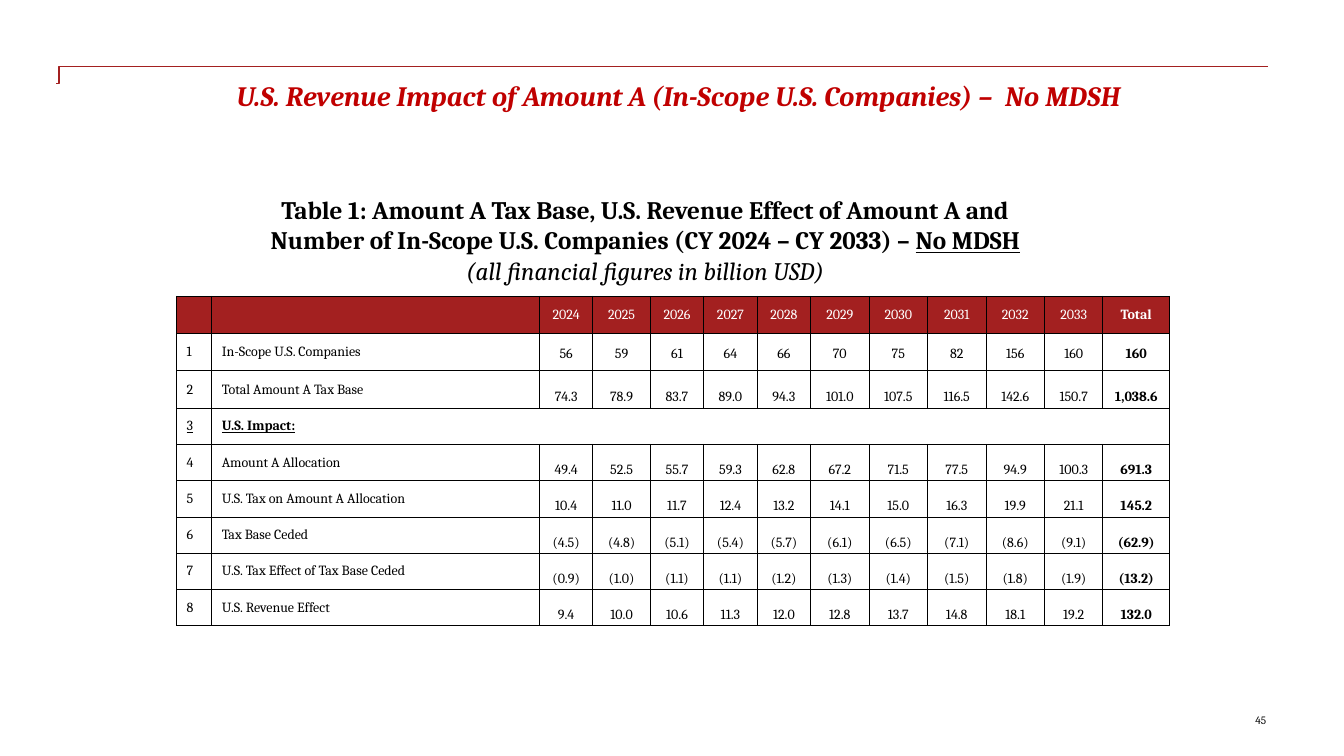
from lxml.etree import SubElement
from pptx import Presentation
from pptx.dml.color import RGBColor
from pptx.enum.shapes import MSO_CONNECTOR
from pptx.enum.text import MSO_ANCHOR, PP_ALIGN
from pptx.oxml import parse_xml
from pptx.oxml.ns import nsdecls, qn
from pptx.util import Inches, Pt

BLACK, WHITE, RED, DARK_RED = "000000", "FFFFFF", "C00000", "A32020"


def add_run(paragraph, text, size, color=BLACK, bold=False, italic=False, underline=False):
    run = paragraph.add_run()
    run.text = text
    font = run.font
    font.name, font.size = "Cambria", Pt(size)
    font.color.rgb = RGBColor.from_string(color)
    font.bold, font.italic, font.underline = bold, italic, underline


def add_text_frame(left, top, width, height, margin):
    """Add a wrapping text box with equal margins and return its text frame."""
    box = slide.shapes.add_textbox(Inches(left), Inches(top), Inches(width), Inches(height))
    frame = box.text_frame
    frame.word_wrap = True
    frame.margin_left = frame.margin_right = Inches(margin)
    frame.margin_top = frame.margin_bottom = Inches(margin)
    return frame


presentation = Presentation()
presentation.slide_width, presentation.slide_height = Inches(13.33), Inches(7.5)
slide = presentation.slides.add_slide(presentation.slide_layouts[6])

# Rule above the title
rule = slide.shapes.add_connector(
    MSO_CONNECTOR.ELBOW, Inches(0.56), Inches(0.83), Inches(12.58), Inches(0.66))
rule.line.color.rgb = RGBColor.from_string(DARK_RED)
rule.line.width = Pt(1)
rule_properties = rule._element.spPr
SubElement(rule_properties, qn("a:effectLst"))
adjustments = rule_properties.find(qn("a:prstGeom")).get_or_add_avLst()
SubElement(adjustments, qn("a:gd"), name="adj1", fmla="val 200")

# Title, page number and table caption
title = add_text_frame(2.25, 0.68, 9.07, 1, 0.1)
add_run(title.paragraphs[0], "U.S. Revenue Impact of Amount A (In-Scope U.S. Companies) –  No MDSH",
        20, RED, bold=True, italic=True)

page_number = add_text_frame(10.33, 7.08, 2.23, 0.17, 0).paragraphs[0]
page_number.alignment = PP_ALIGN.RIGHT
add_run(page_number, "45", 8)

caption = add_text_frame(2.33, 1.83, 8.14, 0.64, 0.1)
heading, unit_note = caption.paragraphs[0], caption.add_paragraph()
heading.alignment = unit_note.alignment = PP_ALIGN.CENTER
add_run(heading, "Table 1: Amount A Tax Base, U.S. Revenue Effect of Amount A and "
        "Number of In-Scope U.S. Companies (CY 2024 – CY 2033) – ", 18, bold=True)
add_run(heading, "No MDSH", 18, bold=True, underline=True)
add_run(unit_note, "(all financial figures in billion USD)", 18, italic=True)

# Revenue table: label, then one figure a year and the total
years = [str(year) for year in range(2024, 2034)]
lines = [
    ("In-Scope U.S. Companies", "56 59 61 64 66 70 75 82 156 160 160"),
    ("Total Amount A Tax Base",
     "74.3 78.9 83.7 89.0 94.3 101.0 107.5 116.5 142.6 150.7 1,038.6"),
    ("U.S. Impact:", ""),
    ("Amount A Allocation", "49.4 52.5 55.7 59.3 62.8 67.2 71.5 77.5 94.9 100.3 691.3"),
    ("U.S. Tax on Amount A Allocation",
     "10.4 11.0 11.7 12.4 13.2 14.1 15.0 16.3 19.9 21.1 145.2"),
    ("Tax Base Ceded",
     "(4.5) (4.8) (5.1) (5.4) (5.7) (6.1) (6.5) (7.1) (8.6) (9.1) (62.9)"),
    ("U.S. Tax Effect of Tax Base Ceded",
     "(0.9) (1.0) (1.1) (1.1) (1.2) (1.3) (1.4) (1.5) (1.8) (1.9) (13.2)"),
    ("U.S. Revenue Effect", "9.4 10.0 10.6 11.3 12.0 12.8 13.7 14.8 18.1 19.2 132.0"),
]
rows = [["", "", *years, "Total"]]
for number, (label, figures) in enumerate(lines, start=1):
    rows.append([str(number), label, *figures.split()])

column_widths = [0.35, 3.25, 0.53, 0.57, 0.53, 0.53, 0.53] + [0.58] * 5 + [0.66]
row_heights = [0.37] * 3 + [0.36] * 6
SECTION_ROW = 3
TOTAL_COLUMN = len(column_widths) - 1

table = slide.shapes.add_table(
    len(rows), len(column_widths), Inches(1.75), Inches(2.94),
    Inches(sum(column_widths)), Inches(sum(row_heights))).table
for column, width in zip(table.columns, column_widths):
    column.width = Inches(width)
for row, height in zip(table.rows, row_heights):
    row.height = Inches(height)
table.cell(SECTION_ROW, 1).merge(table.cell(SECTION_ROW, TOTAL_COLUMN))

for row_index, row in enumerate(table.rows):
    is_header, is_section = row_index == 0, row_index == SECTION_ROW
    for column_index, cell in enumerate(row.cells):
        is_figure = column_index > 1
        cell.vertical_anchor = MSO_ANCHOR.MIDDLE
        cell.margin_left = cell.margin_right = Inches(0 if is_figure else 0.1)
        cell.margin_top = cell.margin_bottom = 0
        if is_figure and row_index > 1 and not is_section:
            cell.margin_top = Inches(0.15)
        if is_header:
            cell.fill.solid()
            cell.fill.fore_color.rgb = RGBColor.from_string(DARK_RED)
        else:
            cell.fill.background()
        for position, side in enumerate(("lnL", "lnR", "lnT", "lnB")):
            cell._tc.get_or_add_tcPr().insert(position, parse_xml(
                f'<a:{side} {nsdecls("a")} w="{Pt(0.75)}"><a:solidFill>'
                f'<a:srgbClr val="{BLACK}"/></a:solidFill></a:{side}>'))
        if column_index >= len(rows[row_index]) or not rows[row_index][column_index]:
            continue
        paragraph = cell.text_frame.paragraphs[0]
        if is_figure:
            paragraph.alignment = PP_ALIGN.CENTER
            if row_index == 1:
                paragraph.line_spacing = 1.15
        add_run(paragraph, rows[row_index][column_index], 10, WHITE if is_header else BLACK,
                bold=column_index == TOTAL_COLUMN or (is_section and column_index == 1),
                underline=is_section)

presentation.save("out.pptx")
